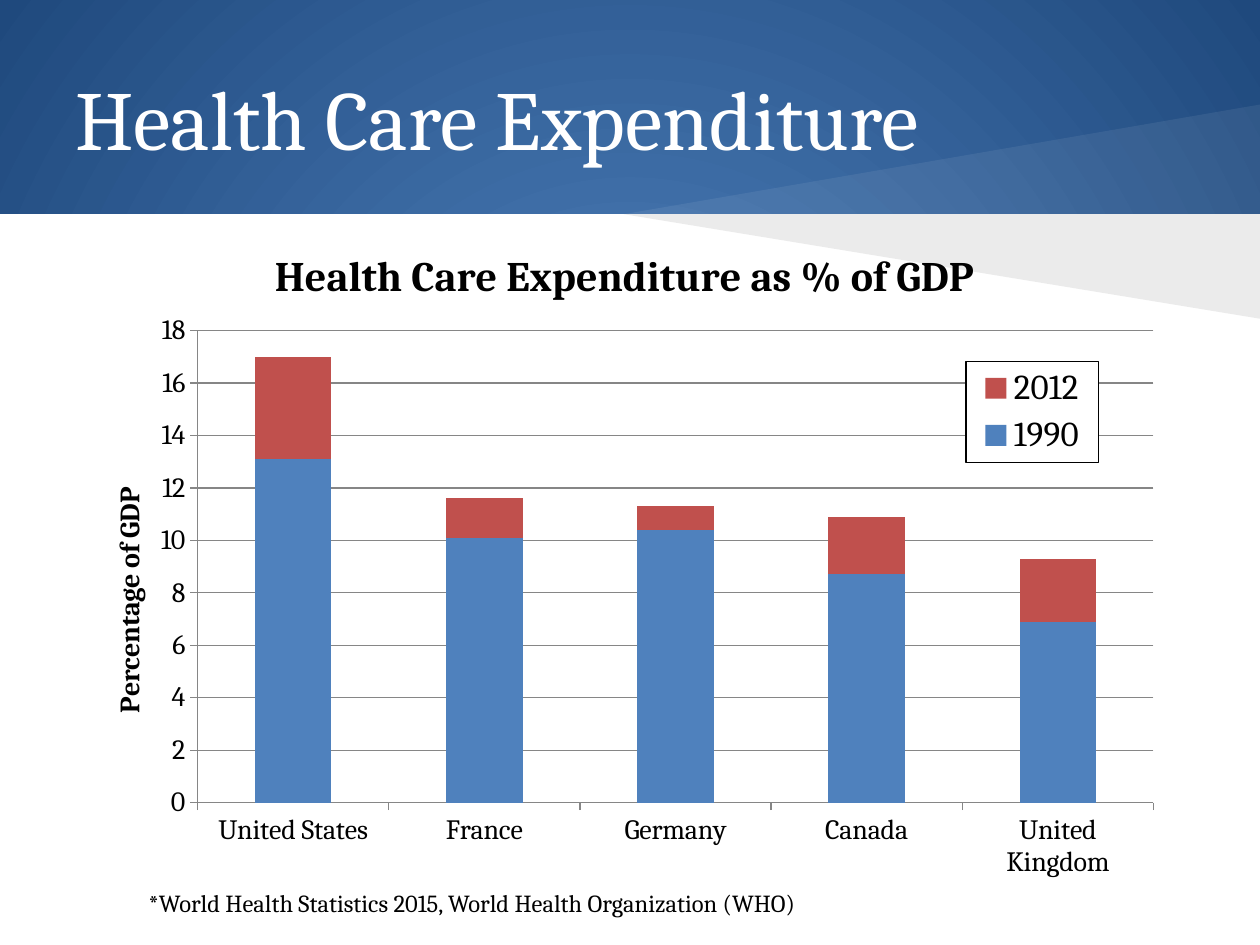
from dataclasses import dataclass

from lxml import etree
from pptx import Presentation
from pptx import util as u
from pptx.chart.data import CategoryChartData
from pptx.dml.color import RGBColor
from pptx.enum import chart as ch
from pptx.enum import shapes, text
from pptx.oxml import parse_xml
from pptx.oxml.ns import nsdecls, qn

FONT = "Cambria"
COLORS = {
    "white": "FFFFFF",
    "black": "000000",
    "blue": "4F81BD",
    "navy": "1F497D",
    "red": "C0504D",
    "grid": "868686",
}


@dataclass
class Beam:
    tip_y: float
    color: str
    opacity: int


@dataclass
class TextSpec:
    words: str
    box: tuple[float, float, float, float]
    size: int
    color: str
    anchor: text.MSO_ANCHOR
    wrap: bool
    inset_y: float


@dataclass
class Series:
    year: str
    values: tuple[float, ...]
    color: str


BEAMS = [Beam(0.83, "white", 7), Beam(2.53, "black", 8)]
TEXTS = [
    TextSpec("Health Care Expenditure", (0.5, 0.3, 9, 1.25), 48, "white",
             text.MSO_ANCHOR.MIDDLE, True, 0.1),
    TextSpec("*World Health Statistics 2015, World Health Organization (WHO)",
             (1.08, 7, 5.86, 0.57), 14, "black", text.MSO_ANCHOR.TOP, False, 0.05),
]
COUNTRIES = ["United States", "France", "Germany", "Canada", "United Kingdom"]
SERIES = [
    Series("1990", (13.1, 10.1, 10.4, 8.7, 6.9), "blue"),
    Series("2012", (3.9, 1.5, 0.9, 2.2, 2.4), "red"),
]


def rgb(name: str) -> RGBColor:
    return RGBColor.from_string(COLORS[name])


def set_font(font, size: int, color: str = "black", bold: bool = False) -> None:
    font.name = FONT
    font.size = u.Pt(size)
    font.bold = bold
    font.color.rgb = rgb(color)


def paint(sp, color: str) -> None:
    sp.shadow.inherit = False
    sp.fill.solid()
    sp.fill.fore_color.rgb = rgb(color)
    sp.line.fill.background()


def draw_background(s) -> None:
    fill = s.background.fill
    fill.gradient()
    for stop, color, position in zip(fill.gradient_stops, ("blue", "navy"), (0, 1)):
        stop.color.rgb = rgb(color)
        stop.position = position
    lin = next(s.element.iter(qn("a:lin")))
    lin.getparent().replace(lin, parse_xml(
        f'<a:path {nsdecls("a")} path="circle">'
        '<a:fillToRect l="50000" t="50000" r="50000" b="50000"/></a:path>'))


def draw_beam(s, beam: Beam) -> None:
    fb = s.shapes.build_freeform(u.Inches(10), u.Inches(1.7))
    fb.add_line_segments([(u.Inches(4.95), u.Inches(1.7)),
                          (u.Inches(10), u.Inches(beam.tip_y))])
    sp = fb.convert_to_shape()
    paint(sp, beam.color)
    color = next(sp.element.spPr.iter(qn("a:srgbClr")))
    etree.SubElement(color, qn("a:alpha"), val=str(beam.opacity * 1000))


def draw_text(s, spec: TextSpec) -> None:
    tf = s.shapes.add_textbox(*map(u.Inches, spec.box)).text_frame
    tf.text = spec.words
    tf.word_wrap = spec.wrap
    tf.vertical_anchor = spec.anchor
    tf.margin_top = tf.margin_bottom = u.Inches(spec.inset_y)
    set_font(tf.paragraphs[0].runs[0].font, spec.size, spec.color)


def set_layout(parent, index: int, **sizes: float) -> None:
    for old in parent.findall(qn("c:layout")):
        parent.remove(old)
    layout = etree.Element(qn("c:layout"))
    manual = etree.SubElement(layout, qn("c:manualLayout"))
    if parent.tag == qn("c:plotArea"):
        etree.SubElement(manual, qn("c:layoutTarget"), val="inner")
    for mode in ("xMode", "yMode"):
        etree.SubElement(manual, qn(f"c:{mode}"), val="edge")
    for key, value in sizes.items():
        etree.SubElement(manual, qn(f"c:{key}"), val=str(value))
    parent.insert(index, layout)


def set_title(owner, words: str, size: int) -> None:
    owner.has_title = True
    tf = owner.chart_title.text_frame if hasattr(owner, "chart_title") else owner.axis_title.text_frame
    tf.text = words
    set_font(tf.paragraphs[0].runs[0].font, size, bold=True)


def style_axis(axis) -> None:
    set_font(axis.tick_labels.font, 16)
    axis.major_tick_mark = ch.XL_TICK_MARK.OUTSIDE
    axis.minor_tick_mark = ch.XL_TICK_MARK.NONE
    axis.format.line.color.rgb = rgb("grid")
    axis.format.line.width = u.Pt(0.75)


def draw_legend(chart) -> None:
    chart.has_legend = True
    legend = chart.legend
    legend.position = ch.XL_LEGEND_POSITION.CORNER
    legend.include_in_layout = True
    set_font(legend.font, 20)
    element = chart.element.xpath("c:chart/c:legend")[0]
    set_layout(element, 1, x=0.81, y=0.21, w=0.12, h=0.15)
    element.find(qn("c:overlay")).addnext(parse_xml(
        f'<c:spPr {nsdecls("c", "a")}><a:solidFill><a:srgbClr val="{COLORS["white"]}"/>'
        f'</a:solidFill><a:ln w="9525"><a:solidFill><a:srgbClr val="{COLORS["black"]}"/>'
        '</a:solidFill></a:ln></c:spPr>'))


def draw_chart(s) -> None:
    data = CategoryChartData()
    data.categories = COUNTRIES
    for series in SERIES:
        data.add_series(series.year, series.values)
    box = map(u.Inches, (0.58, 1.75, 8.75, 5.33))
    chart = s.shapes.add_chart(ch.XL_CHART_TYPE.COLUMN_STACKED, *box, data).chart
    chart.font.name = "Arial"
    chart.font.size = u.Pt(10)
    set_title(chart, "Health Care Expenditure as % of GDP", 24)

    plot = chart.plots[0]
    plot.gap_width = 150
    plot.overlap = 100
    plot.vary_by_categories = False
    for drawn, series in zip(plot.series, SERIES):
        drawn.format.fill.solid()
        drawn.format.fill.fore_color.rgb = rgb(series.color)

    axis = chart.value_axis
    for each in (chart.category_axis, axis):
        style_axis(each)
    axis.minimum_scale, axis.maximum_scale, axis.major_unit = 0, 18, 2
    axis.has_major_gridlines = True
    axis.major_gridlines.format.line.color.rgb = rgb("grid")
    axis.major_gridlines.format.line.width = u.Pt(0.75)
    set_title(axis, "Percentage of GDP", 16)
    set_layout(axis.axis_title.element, 1, x=0.03, y=0.39)
    set_layout(chart.element.xpath("c:chart/c:plotArea")[0], 0,
               x=0.113, y=0.164, w=0.867, h=0.703)
    draw_legend(chart)


def main() -> None:
    prs = Presentation()
    prs.slide_width, prs.slide_height = u.Inches(10), u.Inches(7.5)
    s = prs.slides.add_slide(prs.slide_layouts[6])
    draw_background(s)
    panel = s.shapes.add_shape(shapes.MSO_SHAPE.RECTANGLE,
                               *map(u.Inches, (0, 1.7, 10, 5.8)))
    paint(panel, "white")
    for beam in BEAMS:
        draw_beam(s, beam)
    draw_chart(s)
    for spec in TEXTS:
        draw_text(s, spec)
    prs.save("out.pptx")


if __name__ == "__main__":
    main()
